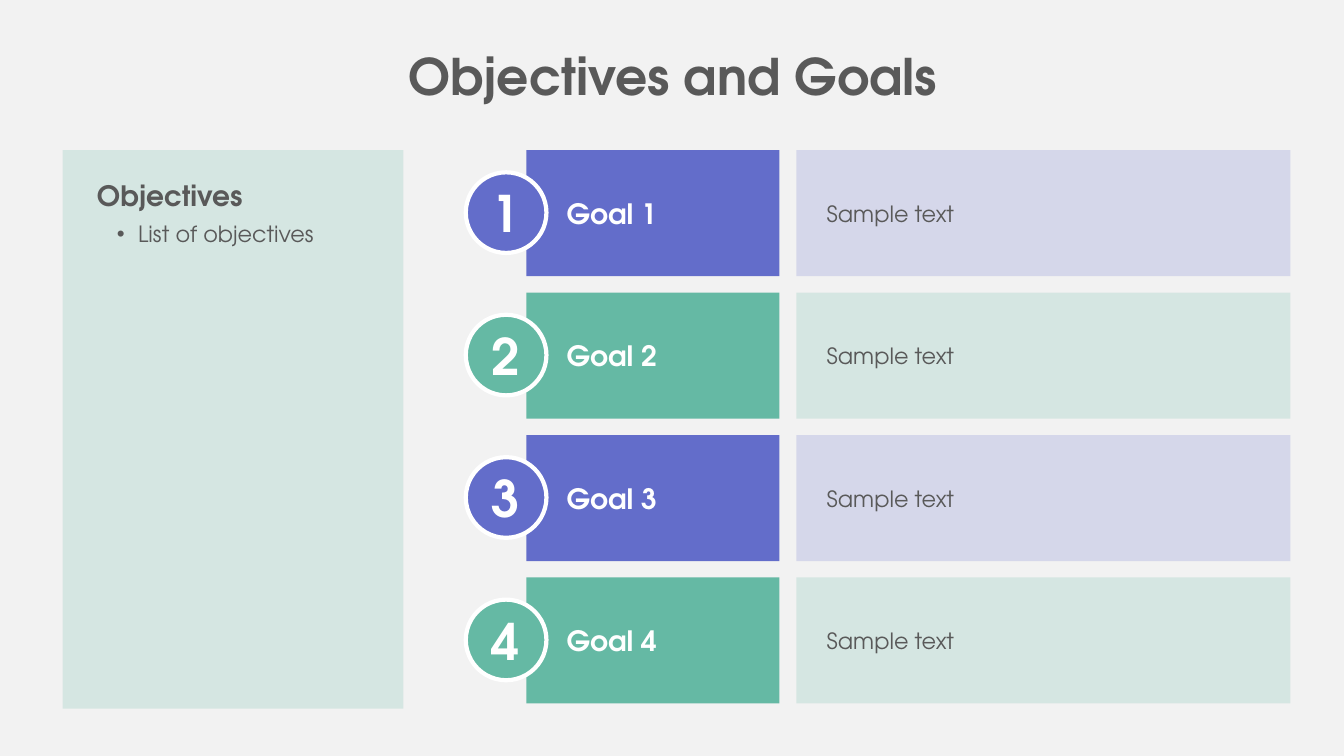
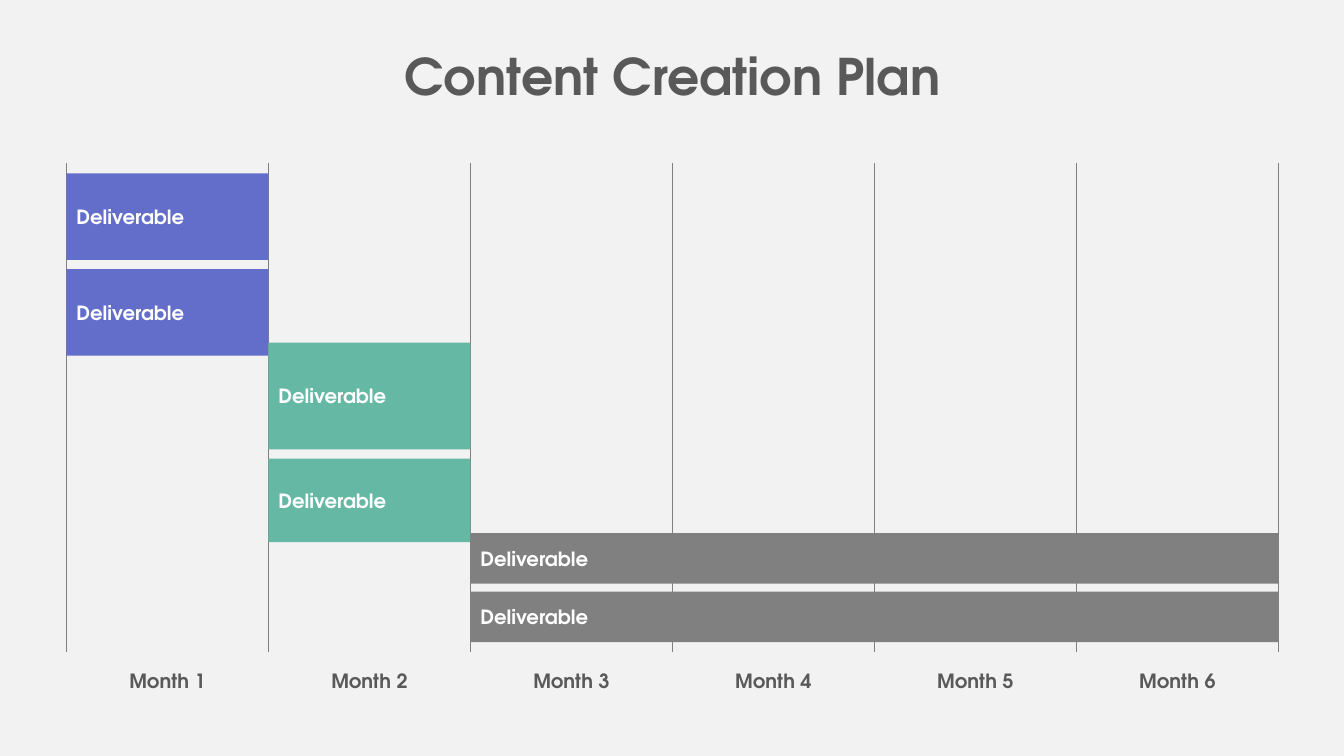
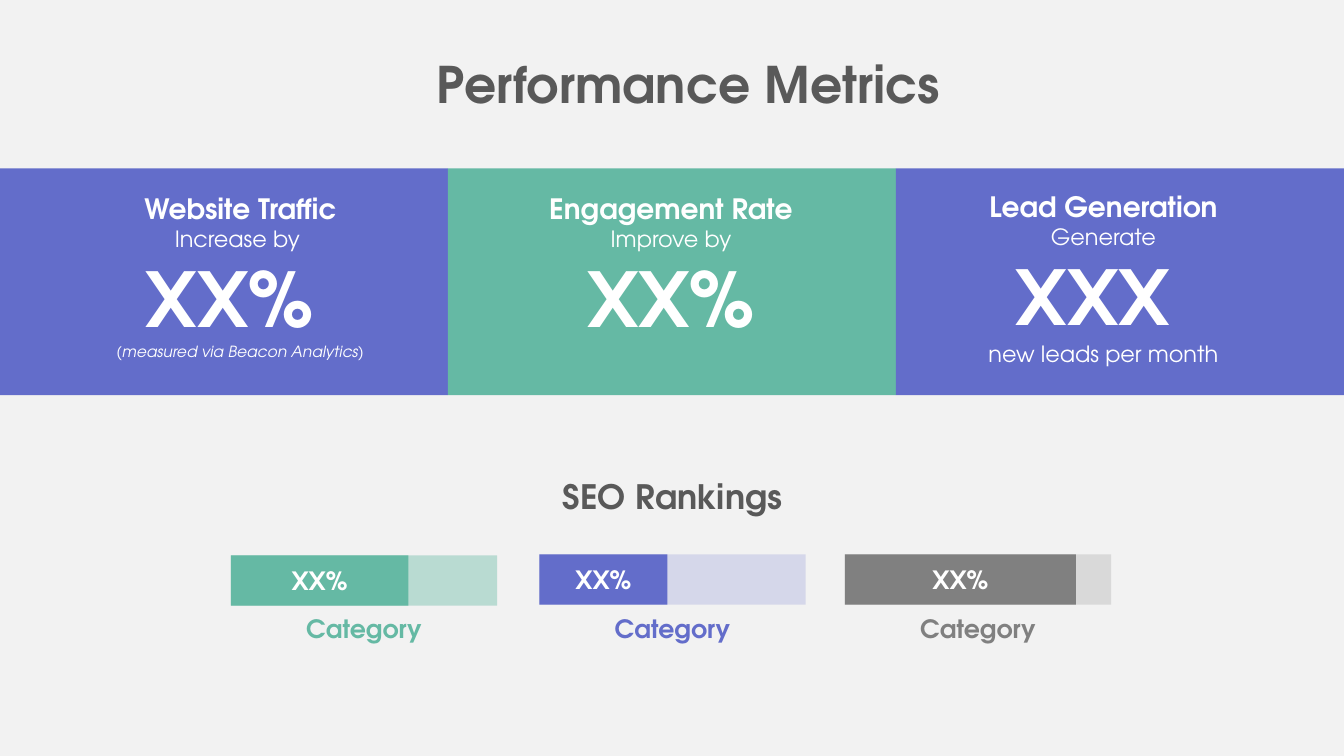
import pptx
import pptx.dml.color
import pptx.enum.shapes
import pptx.enum.text
import pptx.oxml
import pptx.oxml.ns
import pptx.util

Inches = pptx.util.Inches
SHAPE = pptx.enum.shapes.MSO_SHAPE
ALIGN = pptx.enum.text.PP_ALIGN
ANCHOR = pptx.enum.text.MSO_ANCHOR

COLORS = {
    "paper": "F2F2F2",
    "ink": "595959",
    "white": "FFFFFF",
    "violet": "636DCA",
    "green": "65B9A4",
    "gray": "808080",
    "pale": "D9D9D9",
}
FONT = "TeX Gyre Adventor"
DEFAULT_INSETS = (0.1, 0.05, 0.1, 0.05)


def rgb(color):
    return pptx.dml.color.RGBColor.from_string(COLORS[color])


def element(tag, **attributes):
    node = pptx.oxml.parse_xml(f"<{tag} {pptx.oxml.ns.nsdecls('a')}/>")
    for name, value in attributes.items():
        node.set(name, str(value))
    return node


class Deck:
    """Shared style and the slide being filled."""

    def __init__(self):
        self.file = pptx.Presentation()
        self.file.slide_width = Inches(13.33)
        self.file.slide_height = Inches(7.5)
        self.slide = None
        backdrop = self.file.slide_master.background.fill
        backdrop.solid()
        backdrop.fore_color.rgb = rgb("paper")

    def start(self, title, left=1.41, top=0.4):
        self.slide = self.file.slides.add_slide(self.file.slide_layouts[6])
        self.label(left, top, 10.52, 0.71, [(title, 36, True)])

    def fill_text(self, frame, lines, color, align, anchor, insets):
        """Each line is (text, size, bold) plus an optional dict of extras."""
        sides = ("margin_left", "margin_top", "margin_right", "margin_bottom")
        layout = {"word_wrap": True, "vertical_anchor": anchor}
        layout.update(zip(sides, map(Inches, insets)))
        for name, value in layout.items():
            setattr(frame, name, value)
        for index, (text, size, bold, *extras) in enumerate(lines):
            extra = extras[0] if extras else {}
            paragraph = frame.add_paragraph() if index else frame.paragraphs[0]
            paragraph.alignment = align
            run = paragraph.add_run()
            run.text = text
            run.font.color.rgb = rgb(color)
            style = {"name": FONT, "size": pptx.util.Pt(size), "bold": bold,
                     "italic": extra.get("italic", False)}
            for name, value in style.items():
                setattr(run.font, name, value)
            if extra.get("bullet"):
                self.bullet(paragraph)

    def bullet(self, paragraph):
        paragraph.space_before = pptx.util.Pt(6)
        properties = paragraph._p.get_or_add_pPr()
        properties.set("marL", str(Inches(0.41)))
        properties.set("indent", str(Inches(-0.21)))
        properties.append(element("a:buFont", typeface="Arial"))
        properties.append(element("a:buChar", char="•"))

    def label(self, left, top, width, height, lines, color="ink"):
        box = self.slide.shapes.add_textbox(
            Inches(left), Inches(top), Inches(width), Inches(height))
        self.fill_text(box.text_frame, lines, color, ALIGN.CENTER, ANCHOR.TOP,
                       DEFAULT_INSETS)

    def block(self, left, top, width, height, fill, lines=(), color="white",
              opacity=100, kind=SHAPE.RECTANGLE, outline=None,
              align=ALIGN.LEFT, anchor=ANCHOR.MIDDLE, insets=DEFAULT_INSETS):
        shape = self.slide.shapes.add_shape(
            kind, Inches(left), Inches(top), Inches(width), Inches(height))
        shape.shadow.inherit = False
        shape.fill.solid()
        shape.fill.fore_color.rgb = rgb(fill)
        if opacity < 100:
            tint = shape.fill._xPr.find(".//" + pptx.oxml.ns.qn("a:srgbClr"))
            tint.append(element("a:alpha", val=opacity * 1000))
        if outline:
            shape.line.color.rgb = rgb(outline)
            shape.line.width = pptx.util.Pt(3)
        else:
            shape.line.fill.background()
        if lines:
            self.fill_text(shape.text_frame, lines, color, align, anchor, insets)

    def rule(self, x, top, bottom):
        line = self.slide.shapes.add_connector(
            pptx.enum.shapes.MSO_CONNECTOR.STRAIGHT,
            Inches(x), Inches(bottom), Inches(x), Inches(top))
        line.line.color.rgb = rgb("gray")
        line.line.width = pptx.util.Pt(0.5)
        line._element.spPr.append(element("a:effectLst"))


def objectives_and_goals(deck):
    deck.start("Objectives and Goals")

    # Objectives panel
    deck.block(0.62, 1.49, 3.38, 5.54, "green",
               [("Objectives", 20, True),
                ("List of objectives", 16, False, {"bullet": True})],
               color="ink", opacity=20, anchor=ANCHOR.TOP,
               insets=(0.34, 0.28, 0.3, 0.05))

    # Numbered goals
    for index in range(4):
        number = index + 1
        top = 1.49 + index * 1.413
        accent = ("violet", "green")[index % 2]
        deck.block(5.22, top, 2.51, 1.25, accent,
                   [(f"Goal {number}", 20, True)], insets=(0.4, 0.3, 0.1, 0.3))
        deck.block(7.9, top, 4.9, 1.25, accent, [("Sample text", 16, False)],
                   color="ink", opacity=20, insets=(0.3, 0.2, 0.3, 0.2))
        deck.block(4.62, top + 0.22, 0.8, 0.8, accent,
                   [(str(number), 36, True)], kind=SHAPE.OVAL, outline="white",
                   align=ALIGN.CENTER, insets=(0, 0, 0, 0))


def content_creation_plan(deck):
    deck.start("Content Creation Plan")
    left, right, months = 0.66, 12.68, 6
    month_width = (right - left) / months

    # Month grid
    for index in range(months + 1):
        deck.rule(left + index * month_width, 1.62, 6.47)
    for index in range(months):
        center = left + (index + 0.5) * month_width
        deck.label(center - 0.7, 6.59, 1.4, 0.34,
                   [(f"Month {index + 1}", 14, True)])

    # Deliverables: first month, months spanned, top, height, colour
    deliverables = [
        (0, 1, 1.72, 0.86, "violet"),
        (0, 1, 2.67, 0.86, "violet"),
        (1, 1, 3.4, 1.06, "green"),
        (1, 1, 4.55, 0.83, "green"),
        (2, 4, 5.29, 0.5, "gray"),
        (2, 4, 5.87, 0.5, "gray"),
    ]
    for first, span, top, height, fill in deliverables:
        deck.block(left + first * month_width, top, span * month_width, height,
                   fill, [("Deliverable", 14, True)])


def performance_metrics(deck):
    deck.start("Performance Metrics", 1.57, 0.48)

    # Metric bands: colour, text left, text top, lines
    metrics = [
        ("violet", 0.97, 1.85,
         [("Website Traffic", 20, True), ("Increase by ", 16, False),
          ("XX% ", 54, True),
          ("(measured via Beacon Analytics)", 11, False, {"italic": True})]),
        ("green", 5.24, 1.85,
         [("Engagement Rate", 20, True), ("Improve by", 16, False),
          ("XX%", 54, True)]),
        ("violet", 9.53, 1.83,
         [("Lead Generation", 20, True), ("Generate", 16, False),
          ("XXX ", 54, True), ("new leads per month", 16, False)]),
    ]
    band_width = 13.33 / len(metrics)
    for index, (fill, left, top, lines) in enumerate(metrics):
        deck.block(index * band_width, 1.67, band_width, 2.25, fill)
        deck.label(left, top, 2.83, 1.8, lines, "white")

    # Ranking bars: left, top, filled width, colour, track colour, opacity
    deck.label(1.41, 4.67, 10.52, 0.5, [("SEO Rankings", 24, True)])
    track_width = 2.64
    rankings = [
        (2.29, 5.51, 1.76, "green", "green", 40),
        (5.35, 5.5, 1.27, "violet", "violet", 20),
        (8.38, 5.5, 2.29, "gray", "pale", 100),
    ]
    for left, top, filled, fill, track, opacity in rankings:
        deck.block(left, top, track_width, 0.5, track, opacity=opacity)
        deck.block(left, top, filled, 0.5, fill, [("XX%", 18, True)],
                   align=ALIGN.CENTER)
        deck.label(left, 6.04, track_width, 0.4, [("Category", 18, True)], fill)


def main():
    deck = Deck()
    objectives_and_goals(deck)
    content_creation_plan(deck)
    performance_metrics(deck)
    deck.file.save("out.pptx")


if __name__ == "__main__":
    main()
